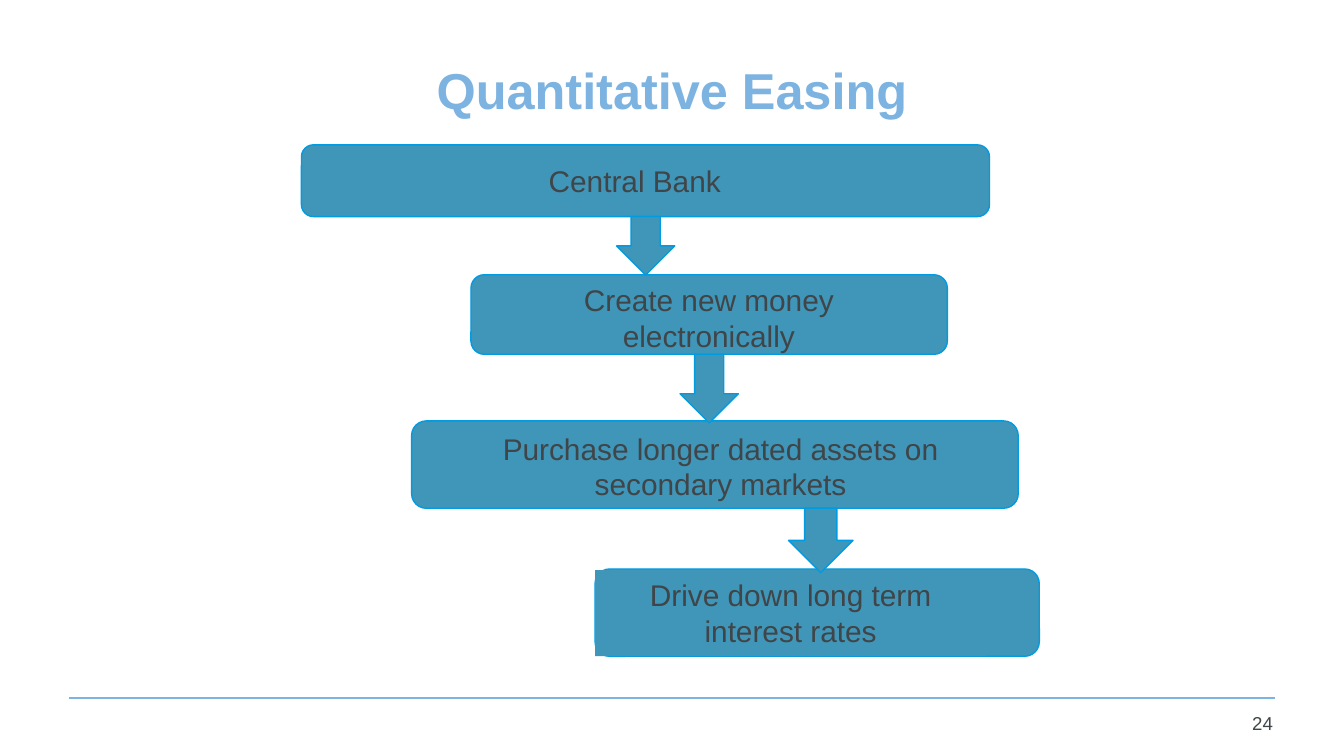
from lxml import etree
from pptx import Presentation
from pptx.dml.color import RGBColor
from pptx.enum import shapes, text
from pptx.oxml import ns
from pptx.util import Pt

SKY, TEAL, OUTLINE, GREY = "7CB3E1", "4096B8", "009BE1", "3F4548"


def color(hex_string):
    return RGBColor.from_string(hex_string)


def write(shape, words, size, hex_color, alignment, bold=False):
    """Put one formatted paragraph into a shape."""
    frame = shape.text_frame
    frame.word_wrap = True
    frame.text = words
    paragraph = frame.paragraphs[0]
    paragraph.alignment = alignment
    font = paragraph.runs[0].font
    font.name, font.size, font.bold = "Arial", Pt(size), bold
    font.color.rgb = color(hex_color)


presentation = Presentation()
presentation.slide_width, presentation.slide_height = Pt(720), Pt(405)
slide = presentation.slides.add_slide(presentation.slide_layouts[5])

# Title
title = slide.shapes.title
title.left, title.top, title.width, title.height = Pt(31), Pt(24), Pt(658), Pt(48)
write(title, "Quantitative Easing", 27, SKY, text.PP_ALIGN.CENTER, bold=True)
title.text_frame.vertical_anchor = text.MSO_ANCHOR.MIDDLE

# Footer rule
rule = slide.shapes.add_connector(
    shapes.MSO_CONNECTOR.STRAIGHT, Pt(36.8), Pt(373.8), Pt(683.2), Pt(373.8))
rule.line.color.rgb = color(SKY)
rule.line.width = Pt(1)
etree.SubElement(rule._element.spPr, ns.qn("a:effectLst"))

# Boxes first, then labels, then arrows: left, top, width, height
rounded, arrow = shapes.MSO_SHAPE.ROUNDED_RECTANGLE, shapes.MSO_SHAPE.DOWN_ARROW
boxes = [
    (161.5, 77.6, 368.6, 38.4),
    (252.3, 147.2, 255.2, 42.6),
    (220.5, 225.5, 325, 46.8),
    (318.8, 304.8, 238, 46.8),
]
labels = [
    ("Central Bank", 172.6, 83.5, 335, 26.6),
    ("Create new money electronically", 269.3, 147.2, 221, 46),
    ("Purchase longer dated assets on secondary markets", 241, 227, 290, 46),
    ("Drive down long term interest rates", 318.8, 305.5, 209.5, 46),
]
arrows = [
    (330.3, 116, 31.2, 31.4),
    (364.3, 189.8, 31.2, 36.8),
    (422.4, 272.2, 34.6, 34.6),
]


for kind, places in ((rounded, boxes), (None, labels), (arrow, arrows)):
    for place in places:
        if kind is None:
            words, *place = place
            label = slide.shapes.add_textbox(*map(Pt, place))
            write(label, words, 16, GREY, text.PP_ALIGN.CENTER)
            continue
        shape = slide.shapes.add_shape(kind, *map(Pt, place))
        shape.shadow.inherit = False
        shape.fill.solid()
        shape.fill.fore_color.rgb = color(TEAL)
        shape.line.color.rgb = color(OUTLINE)
        shape.line.width = Pt(0.75)
    if kind is None:
        # The last label has its own fill
        label.fill.solid()
        label.fill.fore_color.rgb = color(TEAL)

# Slide number
number = slide.shapes.add_textbox(Pt(638), Pt(378), Pt(51), Pt(20))
write(number, "24", 10, GREY, text.PP_ALIGN.RIGHT)

presentation.save("out.pptx")
